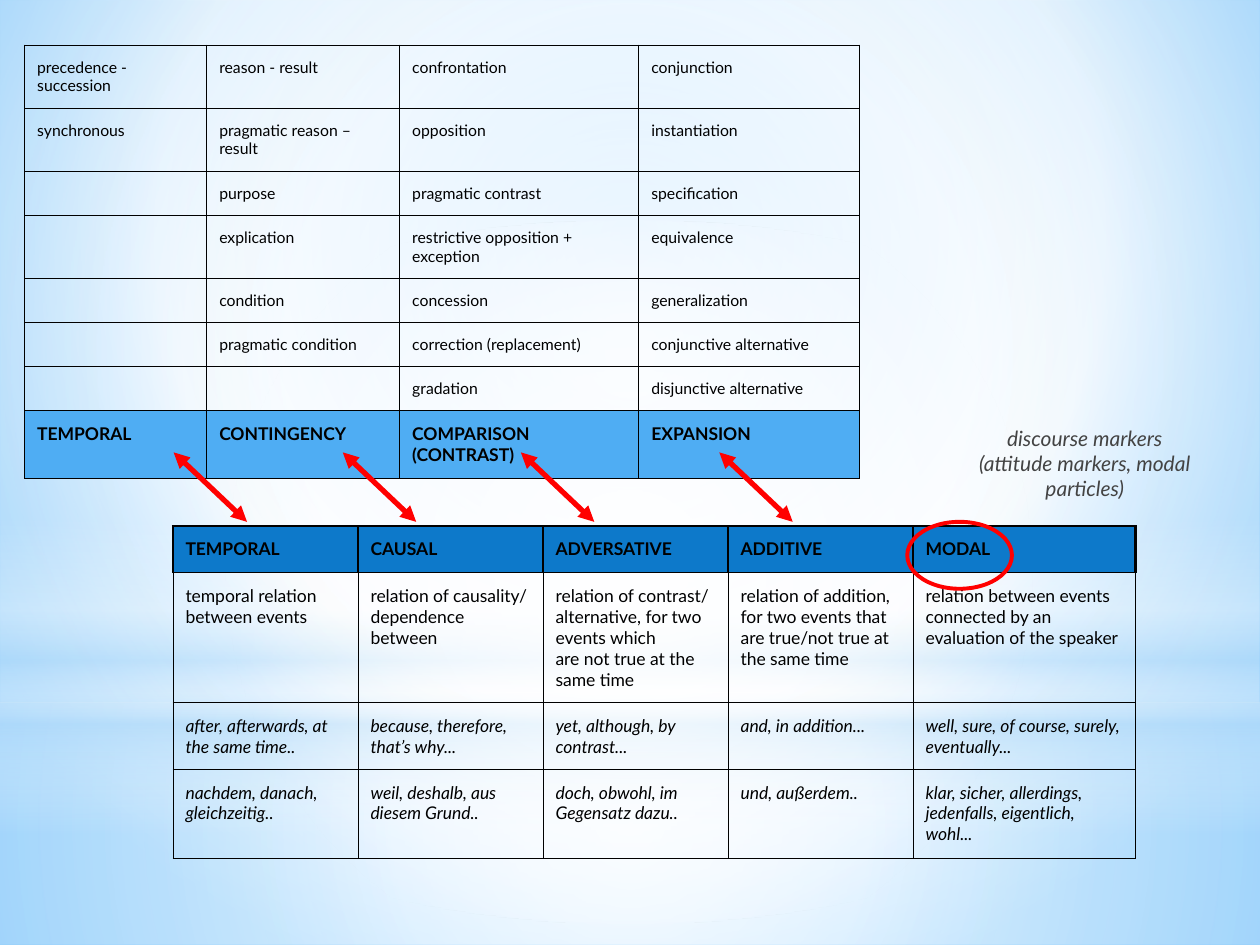
import pptx
import pptx.dml.color
import pptx.enum.shapes
import pptx.enum.text
import pptx.oxml.ns
import pptx.util
from lxml import etree
from pptx.util import Cm, Pt

FONT = "Lato"
BLACK, RED, GREY = "000000", "FF0000", "434343"
INSET = Cm(0.25)
SHAPES = pptx.enum.shapes.MSO_SHAPE
qn = pptx.oxml.ns.qn

# Gradient stops: position %, colour, opacity %
BACKGROUND = [(0, "9ED5FF", 100), (60, "FFFFFF", 100), (100, "5BB9FF", 100)]
BACKGROUND_CENTRE = (20, 10, 20, 60)
MIDDLE = (50, 50, 50, 50)
# Preset, left, top, width, height, stops, centre (None for a vertical blend)
GLOWS = [
    (SHAPES.RECTANGLE, 0, 14.17, 25.4, 4.88,
     [(0, "FFFFFF", 91), (37, "FFFFFF", 76), (100, "B4DCFA", 79)], MIDDLE),
    (SHAPES.RECTANGLE, 0, 0, 25.4, 14.17,
     [(0, "FFFFFF", 89), (48, "FFFFFF", 62), (100, "B4DCFA", 79)], MIDDLE),
    (SHAPES.RECTANGLE, 0, 10.46, 25.4, 6.35,
     [(0, "FFFFFF", 0), (29, "FFFFFF", 30), (45, "B4DCFA", 40),
      (55, "FFFFFF", 26), (65, "B4DCFA", 60), (100, "FFFFFF", 0)], None),
    (SHAPES.OVAL, 0, 4.45, 25.4, 14.17,
     [(0, "FFFFFF", 100), (56, "FFFFFF", 0)], MIDDLE),
]

# Row style: size, bold, italic, fill, side and top border width
PLAIN = (9, False, False, None, 0.75)
CLASS_NAMES = (10, True, False, "4FADF3", 0.75)
HEADINGS = (10, True, False, "0D79CA", 1.5)
MEANING = (10, False, False, None, 0.75)
EXAMPLES = (10, False, True, None, 0.75)

# Row: height, style, cell texts
RELATIONS = [
    (1.27, PLAIN, ["precedence - succession", "reason - result", "confrontation", "conjunction"]),
    (1.27, PLAIN, ["synchronous", "pragmatic reason – result", "opposition", "instantiation"]),
    (0.89, PLAIN, ["", "purpose", "pragmatic contrast", "specification"]),
    (1.27, PLAIN, ["", "explication", "restrictive opposition + exception", "equivalence"]),
    (0.89, PLAIN, ["", "condition", "concession", "generalization"]),
    (0.89, PLAIN, ["", "pragmatic condition", "correction (replacement)", "conjunctive alternative"]),
    (0.89, PLAIN, ["", "", "gradation", "disjunctive alternative"]),
    (1.37, CLASS_NAMES, ["TEMPORAL", "CONTINGENCY", "COMPARISON (CONTRAST)", "EXPANSION"]),
]
MARKERS = [
    (0.93, HEADINGS, ["TEMPORAL", "CAUSAL", "ADVERSATIVE", "ADDITIVE", "MODAL"]),
    (2.62, MEANING, [
        "temporal relation between events",
        "relation of causality/ dependence between",
        "relation of contrast/ alternative, for two events which\nare not true at the same time",
        "relation of addition, for two events that are true/not true at\nthe same time",
        "relation between events connected by an evaluation of the speaker"]),
    (1.35, EXAMPLES, [
        "after, afterwards, at the same time..", "because, therefore, that’s why...",
        "yet, although, by contrast...", "and, in addition...",
        "well, sure, of course, surely, eventually..."]),
    (1.79, EXAMPLES, [
        "nachdem, danach, gleichzeitig..", "weil, deshalb, aus diesem Grund..",
        "doch, obwohl, im Gegensatz dazu..", "und, außerdem..",
        "klar, sicher, allerdings, jedenfalls, eigentlich, wohl..."]),
]
RELATION_COLUMNS = [3.67, 3.89, 4.82, 4.44]
MARKER_COLUMNS = [3.73] * 4 + [4.48]
ARROW_STARTS = [3.5, 6.91, 10.5, 14.5]
ARROW_TOP, ARROW_WIDTH, ARROW_HEIGHT = 9.12, 1.48, 1.4
NOTE = ["discourse markers", "(attitude markers, modal particles)"]


def rgb(colour):
    return pptx.dml.color.RGBColor.from_string(colour)


def add_xml(parent, tag, **attributes):
    return etree.SubElement(parent, qn(tag), {k: str(v) for k, v in attributes.items()})


def set_gradient(gradient, stops, centre):
    """Rewrite a gradFill element as a circular blend, or a vertical one without centre."""
    gradient.clear()
    stop_list = add_xml(gradient, "a:gsLst")
    for position, colour, opacity in stops:
        stop = add_xml(stop_list, "a:gs", pos=position * 1000)
        add_xml(add_xml(stop, "a:srgbClr", val=colour), "a:alpha", val=opacity * 1000)
    if centre:
        sides = {side: value * 1000 for side, value in zip("ltrb", centre)}
        add_xml(add_xml(gradient, "a:path", path="circle"), "a:fillToRect", **sides)
    else:
        add_xml(gradient, "a:lin", ang=5400000, scaled=0)


def add_shape(slide, preset, left, top, width, height):
    """Add a shape with no fill, line or shadow."""
    shape = slide.shapes.add_shape(preset, Cm(left), Cm(top), Cm(width), Cm(height))
    shape.shadow.inherit = False
    shape.fill.background()
    shape.line.fill.background()
    return shape


def add_span(para, text, size, colour, bold=False, italic=False):
    span = para.add_run()
    span.text = text
    font = span.font
    font.name, font.size, font.bold, font.italic = FONT, Pt(size), bold, italic
    font.color.rgb = rgb(colour)


def fill_cell(cell, text, style):
    size, bold, italic, fill, border = style
    cell.margin_left = cell.margin_right = cell.margin_top = cell.margin_bottom = INSET
    properties = cell._tc.get_or_add_tcPr()
    for side, width in (("L", border), ("R", border), ("T", border), ("B", 0.75)):
        line = add_xml(properties, f"a:ln{side}", w=Pt(width))
        add_xml(add_xml(line, "a:solidFill"), "a:srgbClr", val=BLACK)
    if fill:
        cell.fill.solid()
        cell.fill.fore_color.rgb = rgb(fill)
    else:
        cell.fill.background()
    frame = cell.text_frame
    for index, part in enumerate(text.split("\n")):
        para = frame.add_paragraph() if index else frame.paragraphs[0]
        if part:
            add_span(para, part, size, BLACK, bold, italic)
        else:
            add_xml(para._p, "a:endParaRPr", sz=size * 100)


def add_table(slide, left, top, columns, rows):
    height = sum(row[0] for row in rows)
    table = slide.shapes.add_table(len(rows), len(columns), Cm(left), Cm(top),
                                   Cm(sum(columns)), Cm(height)).table
    table.first_row = table.horz_banding = False
    for column, width in zip(table.columns, columns):
        column.width = Cm(width)
    for row, (row_height, style, texts) in zip(table.rows, rows):
        row.height = Cm(row_height)
        for cell, text in zip(row.cells, texts):
            fill_cell(cell, text, style)


def add_double_arrow(slide, left):
    arrow = slide.shapes.add_connector(
        pptx.enum.shapes.MSO_CONNECTOR.STRAIGHT, Cm(left), Cm(ARROW_TOP),
        Cm(left + ARROW_WIDTH), Cm(ARROW_TOP + ARROW_HEIGHT))
    arrow.line.color.rgb = rgb(RED)
    arrow.line.width = Pt(3)
    line = arrow.line._get_or_add_ln()
    add_xml(line, "a:headEnd", type="triangle")
    add_xml(line, "a:tailEnd", type="triangle")
    add_xml(arrow._element.spPr, "a:effectLst")


def add_note(slide):
    box = add_shape(slide, SHAPES.ROUNDED_RECTANGLE, 19.18, 8.33, 5.38, 2.01)
    box.adjustments[0] = 0.4
    frame = box.text_frame
    frame.word_wrap = True
    frame.vertical_anchor = pptx.enum.text.MSO_ANCHOR.BOTTOM
    frame.margin_left = frame.margin_right = 0
    frame.margin_top = frame.margin_bottom = 0
    for index, text in enumerate(NOTE):
        para = frame.add_paragraph() if index else frame.paragraphs[0]
        para.alignment = pptx.enum.text.PP_ALIGN.CENTER
        add_span(para, text, 12, GREY, italic=True)


def main():
    deck = pptx.Presentation()
    deck.slide_width, deck.slide_height = Cm(25.4), Cm(19.05)
    slide = deck.slides.add_slide(deck.slide_layouts[6])
    slide.background.fill.gradient()
    set_gradient(slide.element.find(".//" + qn("a:gradFill")), BACKGROUND, BACKGROUND_CENTRE)
    for preset, left, top, width, height, stops, centre in GLOWS:
        glow = add_shape(slide, preset, left, top, width, height)
        glow.fill.gradient()
        set_gradient(glow._element.spPr.find(qn("a:gradFill")), stops, centre)
    add_table(slide, 0.5, 0.91, RELATION_COLUMNS, RELATIONS)
    add_table(slide, 3.49, 10.61, MARKER_COLUMNS, MARKERS)
    for left in ARROW_STARTS:
        add_double_arrow(slide, left)
    ring = add_shape(slide, SHAPES.OVAL, 18.29, 10.52, 2.11, 1.35)
    ring.line.color.rgb = rgb(RED)
    ring.line.width = Pt(2.25)
    add_note(slide)
    deck.save("out.pptx")


if __name__ == "__main__":
    main()
